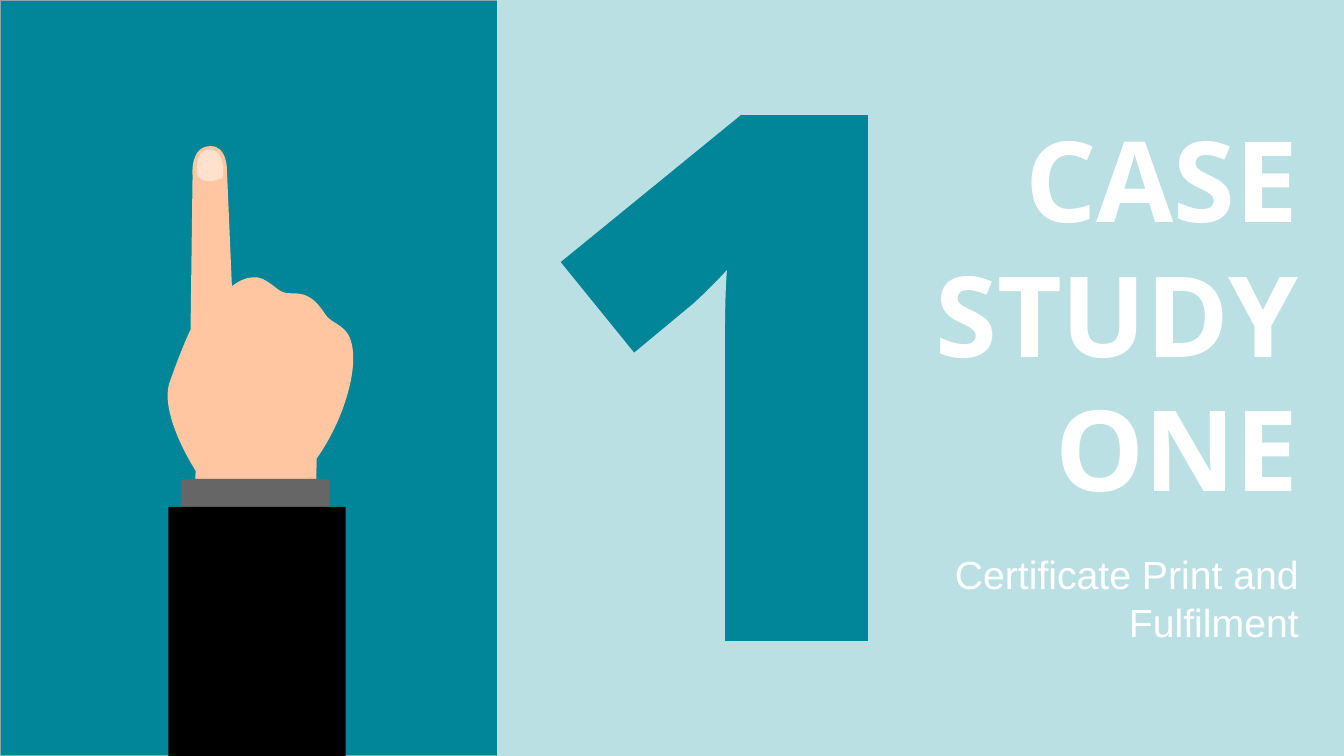
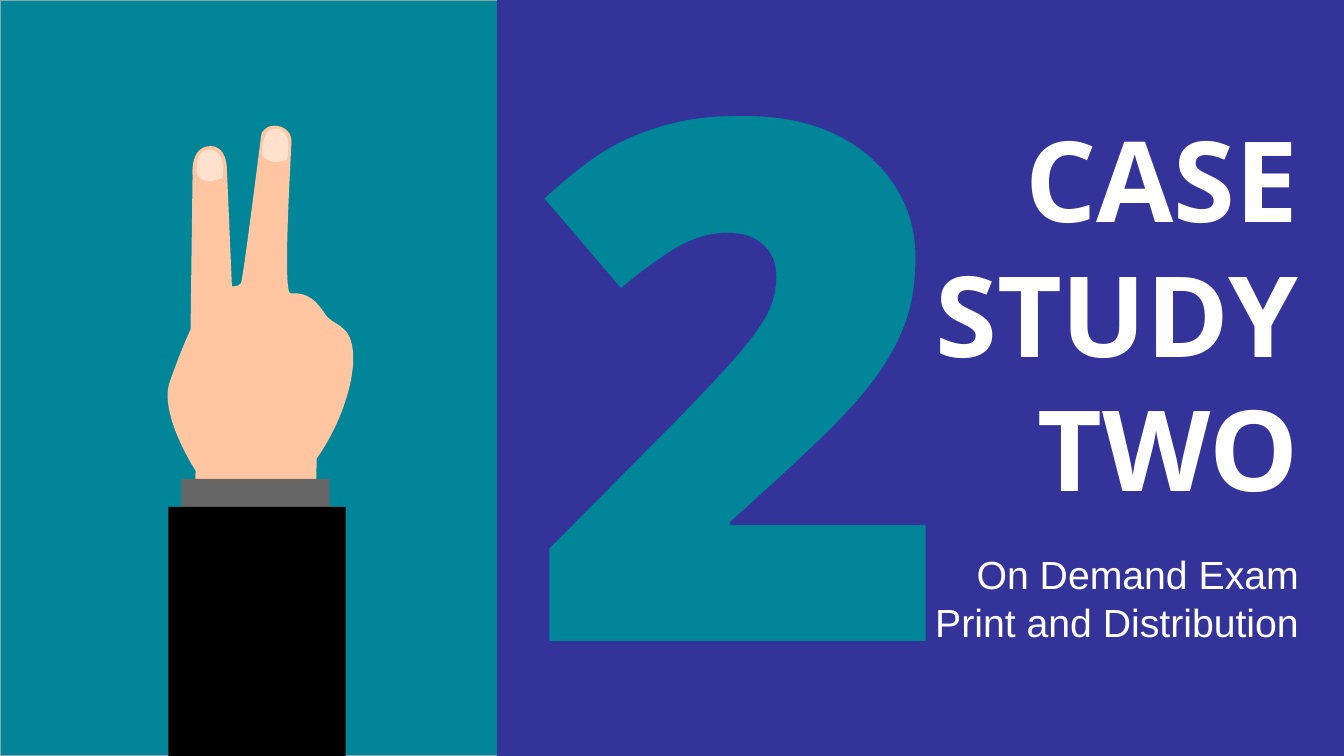
from lxml import etree
from pptx import Presentation, util as u
from pptx.dml.color import RGBColor
from pptx.enum import shapes, text
from pptx.oxml import ns

WIDTH, HEIGHT = 13.33, 7.5
PANEL_LEFT = 4.93
COLUMN_LEFT, COLUMN_WIDTH = 9.27, 3.61
SUBTITLE_BOTTOM = 6.4
CURVE_STEPS = 20

TEAL = RGBColor(0x00, 0x86, 0x98)
EDGE = RGBColor(0x8A, 0xA6, 0xA8)
PALE = RGBColor(0xBB, 0xE0, 0xE3)
INDIGO = RGBColor(0x33, 0x33, 0x99)
WHITE = RGBColor(0xFF, 0xFF, 0xFF)
SKIN = RGBColor(0xFF, 0xC6, 0xA1)
NAIL = RGBColor(0xFF, 0xE1, 0xCD)
CUFF = RGBColor(0x66, 0x66, 0x66)
BLACK = RGBColor(0x00, 0x00, 0x00)

# Outlines, in inches: a start point, then lines (x, y)
# and cubic curves (x1, y1, x2, y2, x, y).
PANEL = [(PANEL_LEFT, 0), (WIDTH, 0), (WIDTH, HEIGHT), (PANEL_LEFT, HEIGHT)]

DIGIT_ONE = [
    (7.35, 1.14), (5.56, 2.6), (6.29, 3.5), (6.88, 3.01),
    (7.01, 2.89, 7.12, 2.78, 7.21, 2.68),
    (7.19, 2.95, 7.19, 3.26, 7.19, 3.6),
    (7.19, 6.36), (8.61, 6.36), (8.61, 1.14),
]
DIGIT_TWO = [
    (7.37, 1.15),
    (7.1, 1.15, 6.86, 1.17, 6.65, 1.23),
    (6.44, 1.28, 6.24, 1.36, 6.06, 1.46),
    (5.88, 1.56, 5.66, 1.73, 5.4, 1.97),
    (6.16, 2.86),
    (6.37, 2.68, 6.56, 2.55, 6.72, 2.45),
    (6.88, 2.36, 7.05, 2.31, 7.21, 2.31),
    (7.37, 2.31, 7.49, 2.35, 7.57, 2.43),
    (7.66, 2.51, 7.7, 2.61, 7.7, 2.75),
    (7.7, 2.85, 7.68, 2.95, 7.64, 3.05),
    (7.6, 3.15, 7.52, 3.27, 7.41, 3.41),
    (7.3, 3.55, 7.07, 3.8, 6.71, 4.17),
    (5.45, 5.44), (5.45, 6.36), (9.18, 6.36), (9.18, 5.21),
    (7.24, 5.21), (7.24, 5.18),
    (7.81, 4.67, 8.18, 4.32, 8.35, 4.14),
    (8.53, 3.95, 8.67, 3.78, 8.77, 3.62),
    (8.88, 3.45, 8.96, 3.28, 9.01, 3.11),
    (9.06, 2.94, 9.08, 2.75, 9.08, 2.55),
    (9.08, 2.28, 9.01, 2.04, 8.86, 1.82),
    (8.72, 1.61, 8.52, 1.44, 8.26, 1.32),
    (8, 1.2, 7.7, 1.15, 7.37, 1.15),
]

PALM_AND_INDEX = [
    (1.91, 5.92), (1.94, 4.67),
    (1.94, 4.67, 1.58, 4.12, 1.68, 3.8),
    (1.79, 3.48, 1.89, 3.27, 1.89, 3.27),
    (1.91, 1.74),
    (1.91, 1.74, 1.88, 1.45, 2.09, 1.45),
    (2.25, 1.45, 2.25, 1.67, 2.25, 1.67),
    (2.3, 2.84),
]
FOLDED_MIDDLE = [
    (2.3, 2.84, 2.46, 2.7, 2.61, 2.77),
    (2.76, 2.85, 2.76, 2.91, 2.88, 2.91),
]
RAISED_MIDDLE = [
    (2.3, 2.84, 2.36, 2.85, 2.39, 2.81),
    (2.41, 2.78, 2.58, 1.42, 2.59, 1.35),
    (2.61, 1.19, 2.91, 1.22, 2.89, 1.42),
    (2.89, 1.49, 2.8, 2.91, 2.88, 2.91),
]
KNUCKLES_AND_WRIST = [
    (2.99, 2.91, 3.09, 2.91, 3.22, 3.11),
    (3.3, 3.24, 3.47, 3.2, 3.5, 3.48),
    (3.53, 3.77, 3.37, 4.23, 3.14, 4.55),
    (3.13, 5.92),
]
INDEX_NAIL = [
    (1.96, 1.75),
    (1.96, 1.75, 1.92, 1.55, 2.02, 1.5),
    (2.11, 1.45, 2.24, 1.51, 2.21, 1.76),
    (2.21, 1.76, 2.06, 1.85, 1.96, 1.75),
]
MIDDLE_NAIL = [
    (2.6, 1.54),
    (2.6, 1.54, 2.59, 1.31, 2.7, 1.28),
    (2.81, 1.26, 2.89, 1.32, 2.85, 1.58),
    (2.85, 1.58, 2.7, 1.66, 2.6, 1.54),
]

CASES = [
    dict(title="CASE STUDY\vONE", subtitle="Certificate Print and Fulfilment",
         panel=PALE, digit=DIGIT_ONE, backdrop_width=9.03, subtitle_height=0.94,
         middle=FOLDED_MIDDLE, nails=[INDEX_NAIL]),
    dict(title="CASE STUDY\vTWO", subtitle="On Demand Exam Print and Distribution",
         panel=INDIGO, digit=DIGIT_TWO, backdrop_width=9.5, subtitle_height=1.41,
         middle=RAISED_MIDDLE, nails=[INDEX_NAIL, MIDDLE_NAIL]),
]


def paint(shape, color, edge=None):
    shape.shadow.inherit = False
    shape.fill.solid()
    shape.fill.fore_color.rgb = color
    if edge is None:
        shape.line.fill.background()
    else:
        shape.line.color.rgb = edge
        shape.line.width = u.Pt(2)


def pairs(segment):
    return list(zip(segment[::2], segment[1::2]))


def extent(outline):
    """Return left, top, right and bottom of the drawn outline."""
    points = [outline[0]]
    for segment in outline[1:]:
        controls = [points[-1], *pairs(segment)]
        if len(segment) == 6:
            for step in range(1, CURVE_STEPS):
                t = step / CURVE_STEPS
                weights = ((1 - t) ** 3, 3 * t * (1 - t) ** 2, 3 * t * t * (1 - t), t ** 3)
                points.append(tuple(sum(w * c[axis] for w, c in zip(weights, controls))
                                    for axis in (0, 1)))
        points.append(controls[-1])
    xs, ys = zip(*points)
    return min(xs), min(ys), max(xs), max(ys)


def add_outline(parts, color, outline, hole=()):
    """Draw one freeform with true curves and, if given, a hole in it."""
    left, top, right, bottom = extent(outline)
    builder = parts.build_freeform(u.Inches(left), u.Inches(top), scale=1.0)
    builder.add_line_segments([(u.Inches(right), u.Inches(top)),
                               (u.Inches(right), u.Inches(bottom))])
    shape = builder.convert_to_shape()
    track = shape.element.find(".//" + ns.qn("a:path"))
    for child in list(track):
        track.remove(child)
    for contour in filter(None, (outline, hole)):
        for index, segment in enumerate(contour):
            tag = "a:moveTo" if index == 0 else "a:lnTo"
            if len(segment) == 6:
                tag = "a:cubicBezTo"
            command = etree.SubElement(track, ns.qn(tag))
            for x, y in pairs(segment):
                etree.SubElement(command, ns.qn("a:pt"),
                                 x=str(u.Inches(x) - u.Inches(left)),
                                 y=str(u.Inches(y) - u.Inches(top)))
        etree.SubElement(track, ns.qn("a:close"))
    paint(shape, color)


def add_block(parts, left, top, width, height, color, edge=None):
    block = parts.add_shape(
        shapes.MSO_SHAPE.RECTANGLE, *map(u.Inches, (left, top, width, height)))
    paint(block, color, edge)


def add_text(slide, words, top, height, *, font, size, spacing, bold=False,
             anchor=text.MSO_ANCHOR.TOP):
    box = slide.shapes.add_textbox(
        *map(u.Inches, (COLUMN_LEFT, top, COLUMN_WIDTH, height)))
    frame = box.text_frame
    frame.word_wrap = True
    frame.vertical_anchor = anchor
    frame.margin_left = frame.margin_right = frame.margin_top = frame.margin_bottom = 0
    paragraph = frame.paragraphs[0]
    paragraph.text = words
    paragraph.alignment = text.PP_ALIGN.RIGHT
    paragraph.line_spacing = u.Pt(spacing)
    for run in paragraph.runs:
        run.font.name = font
        run.font.size = u.Pt(size)
        run.font.bold = bold
        run.font.color.rgb = WHITE


def add_hand(slide, middle, nails):
    hand = slide.shapes.add_group_shape().shapes
    add_outline(hand, SKIN, PALM_AND_INDEX + middle + KNUCKLES_AND_WRIST)
    for nail in nails:
        add_outline(hand, NAIL, nail)
    sleeve = slide.shapes.add_group_shape().shapes
    add_block(sleeve, 1.8, 4.75, 1.47, 0.5, CUFF)
    add_block(sleeve, 1.67, 5.03, 1.76, HEIGHT - 5.03, BLACK)


def add_case(deck, case):
    slide = deck.slides.add_slide(deck.slide_layouts[6])
    add_block(slide.shapes, 0, 0, case["backdrop_width"], HEIGHT, TEAL, EDGE)
    add_outline(slide.shapes, case["panel"], PANEL, hole=case["digit"])
    add_text(slide, case["title"], 1.1, 4.04, font="Open Sans", size=80,
             spacing=96, bold=True)
    add_hand(slide, case["middle"], case["nails"])
    height = case["subtitle_height"]
    add_text(slide, case["subtitle"], SUBTITLE_BOTTOM - height, height, font="Arial",
             size=28, spacing=34, anchor=text.MSO_ANCHOR.BOTTOM)


def main():
    deck = Presentation()
    deck.slide_width, deck.slide_height = u.Inches(WIDTH), u.Inches(HEIGHT)
    for case in CASES:
        add_case(deck, case)
    deck.save("out.pptx")


if __name__ == "__main__":
    main()
